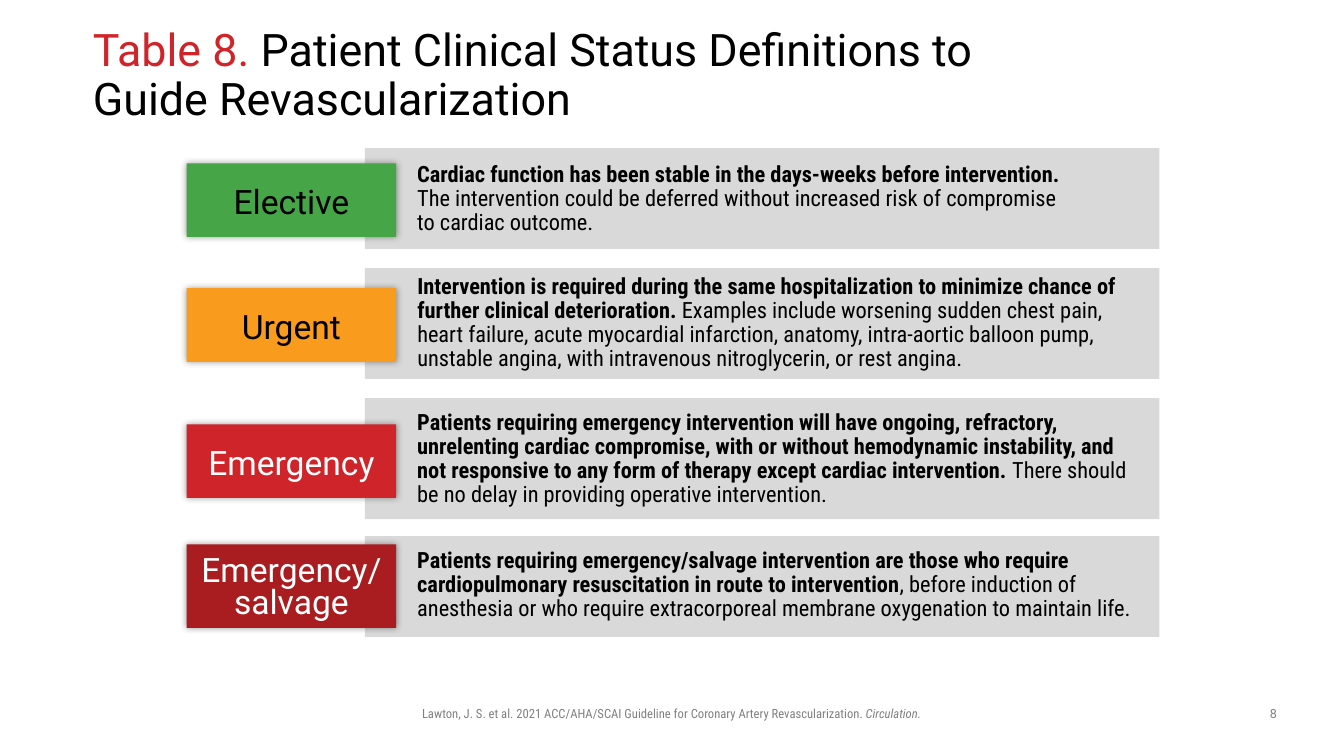
from pptx import Presentation
from pptx.dml.color import RGBColor
from pptx.enum.shapes import MSO_SHAPE
from pptx.enum.text import MSO_ANCHOR, PP_ALIGN
from pptx.oxml import parse_xml
from pptx.oxml.ns import nsdecls
from pptx.util import Inches, Pt

BLACK, WHITE, RED, GRAY, PANEL = "000000", "FFFFFF", "CF2429", "808080", "D9D9D9"
LABEL_LEFT, LABEL_WIDTH = 1.85, 2.08
PANEL_LEFT, PANEL_WIDTH = 3.62, 7.88
DEFINITION_LEFT = 4.04

STATUSES = [
    dict(label="Elective", fill="46A547", color=BLACK,
         panel=(1.47, 1), tag=(1.62, 0.73), label_box=(1.82, 0.42),
         definition_box=(1.57, 6.73, 0.83),
         lead="Cardiac function has been stable in the days-weeks before intervention. ",
         rest="The intervention could be deferred without increased risk of compromise "
              "to cardiac outcome."),
    dict(label="Urgent", fill="F99B1D", color=BLACK,
         panel=(2.66, 1.1), tag=(2.86, 0.73), label_box=(3.06, 0.42),
         definition_box=(2.68, 7.15, 1.07),
         lead="Intervention is required during the same hospitalization to minimize "
              "chance of further clinical deterioration. ",
         rest="Examples include worsening sudden chest pain, heart failure, acute "
              "myocardial infarction, anatomy, intra-aortic balloon pump, unstable "
              "angina, with intravenous nitroglycerin, or rest angina."),
    dict(label="Emergency", fill=RED, color=WHITE,
         panel=(3.95, 1.2), tag=(4.21, 0.73), label_box=(4.41, 0.42),
         definition_box=(4.03, 7.33, 1.07),
         lead="Patients requiring emergency intervention will have ongoing, refractory, "
              "unrelenting cardiac compromise, with or without hemodynamic instability, "
              "and not responsive to any form of therapy except cardiac intervention. ",
         rest="There should be no delay in providing operative intervention."),
    dict(label="Emergency/salvage", fill="A91C1F", color=WHITE,
         panel=(5.32, 1), tag=(5.4, 0.83), label_box=(5.47, 0.75),
         definition_box=(5.4, 7.47, 0.83),
         lead="Patients requiring emergency/salvage intervention are those who require "
              "cardiopulmonary resuscitation in route to intervention",
         rest=", before induction of anesthesia or who require extracorporeal membrane "
              "oxygenation to maintain life."),
]


def rgb(color):
    return RGBColor.from_string(color)


def add_rect(s, left, top, width, height, fill):
    sp = s.shapes.add_shape(MSO_SHAPE.RECTANGLE, Inches(left), Inches(top),
                            Inches(width), Inches(height))
    sp.shadow.inherit = False
    sp.fill.solid()
    sp.fill.fore_color.rgb = rgb(fill)
    sp.line.fill.background()
    return sp


def add_glow_shadow(sp):
    effects = sp._element.spPr.find(".//{*}effectLst")
    effects.append(parse_xml(
        f'<a:outerShdw {nsdecls("a")} blurRad="{Pt(5)}" dist="0" dir="0" '
        'algn="ctr" rotWithShape="0"><a:srgbClr val="000000">'
        '<a:alpha val="40000"/></a:srgbClr></a:outerShdw>'))


def add_text(s, left, top, width, height, texts, font, size, color=None,
             align=PP_ALIGN.LEFT, spacing=1.0):
    box = s.shapes.add_textbox(Inches(left), Inches(top), Inches(width), Inches(height))
    tf = box.text_frame
    tf.word_wrap = True
    p = tf.paragraphs[0]
    p.alignment = align
    p.line_spacing = spacing
    p.font.name = font
    p.font.size = Pt(size)
    if color:
        p.font.color.rgb = rgb(color)
    for text in texts:
        p.add_run().text = text
    return tf


def add_title(s):
    tf = add_text(s, 0.92, 0.4, 9.58, 0.72,
                  ["Table 8. ", "Patient Clinical Status Definitions to Guide Revascularization"],
                  "Roboto", 32, spacing=0.9)
    tf.margin_left = tf.margin_right = tf.margin_top = tf.margin_bottom = 0
    tf.vertical_anchor = MSO_ANCHOR.MIDDLE
    for r, color in zip(tf.paragraphs[0].runs, (RED, BLACK)):
        r.font.color.rgb = rgb(color)


def add_status(s, status):
    top, height = status["panel"]
    add_rect(s, PANEL_LEFT, top, PANEL_WIDTH, height, PANEL)
    top, height = status["tag"]
    add_glow_shadow(add_rect(s, LABEL_LEFT, top, LABEL_WIDTH, height, status["fill"]))
    top, height = status["label_box"]
    add_text(s, LABEL_LEFT, top, LABEL_WIDTH, height, [status["label"]],
             "Roboto", 24, status["color"], PP_ALIGN.CENTER, 0.8)
    top, width, height = status["definition_box"]
    tf = add_text(s, DEFINITION_LEFT, top, width, height, [status["lead"], status["rest"]],
                  "Roboto Condensed", 16, BLACK, spacing=0.9)
    p = tf.paragraphs[0]
    p.space_after = Pt(6)
    p.runs[0].font.bold = True


def add_footer(s):
    tf = add_text(s, 3.17, 6.95, 6.98, 0.25,
                  ["Lawton, J. S. et al. 2021 ACC/AHA/SCAI Guideline for Coronary Artery "
                   "Revascularization. ", "Circulation."],
                  "Roboto Condensed", 9, GRAY, PP_ALIGN.CENTER)
    tf.paragraphs[0].runs[1].font.italic = True
    add_text(s, 12.42, 6.95, 0.42, 0.26, ["8"], "Roboto", 9, GRAY, PP_ALIGN.CENTER)


def main():
    prs = Presentation()
    prs.slide_width = Inches(13.33)
    prs.slide_height = Inches(7.5)
    s = prs.slides.add_slide(prs.slide_layouts[6])
    add_title(s)
    for status in STATUSES:
        add_status(s, status)
    add_footer(s)
    prs.save("out.pptx")


if __name__ == "__main__":
    main()
